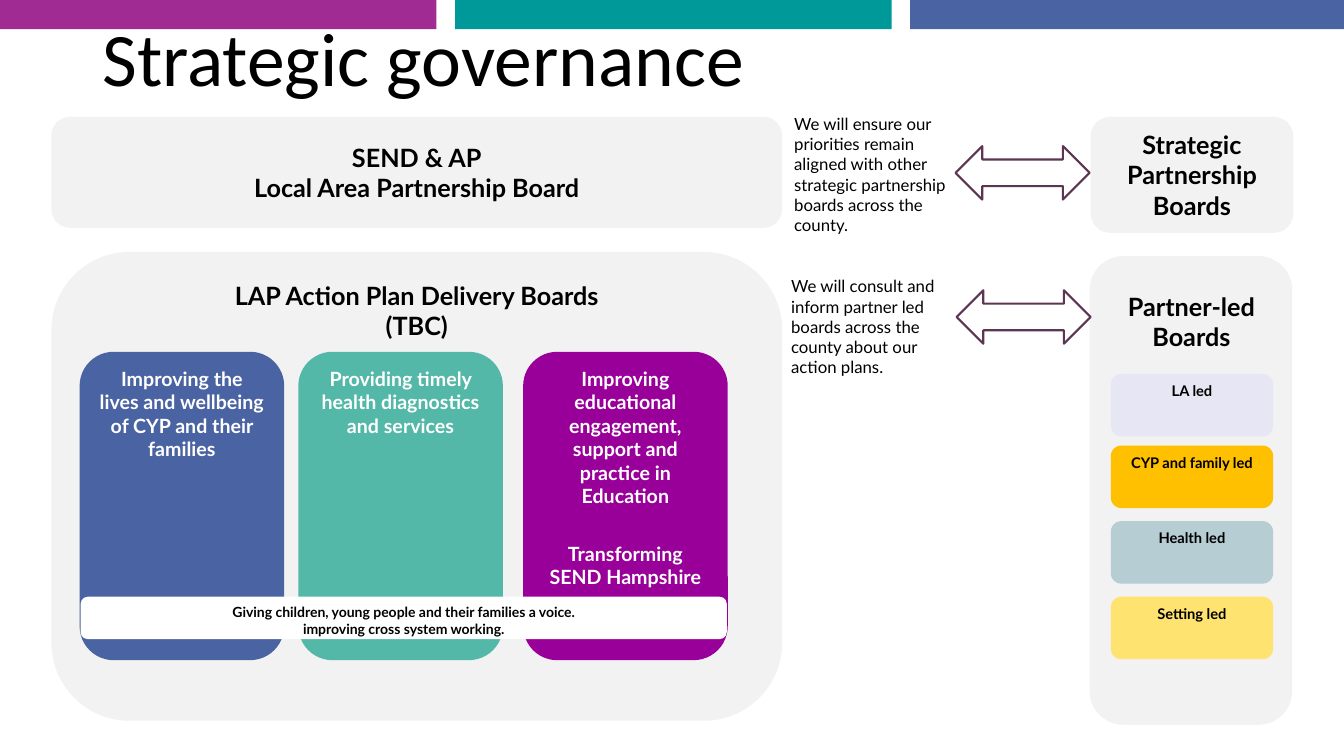
from pptx import Presentation, util as u
from pptx.dml.color import RGBColor
from pptx.enum import shapes, text

BLACK = RGBColor(0x00, 0x00, 0x00)
WHITE = RGBColor(0xFF, 0xFF, 0xFF)
PANEL = RGBColor(0xF2, 0xF2, 0xF2)
PURPLE = RGBColor(0xA0, 0x2B, 0x93)
TEAL = RGBColor(0x00, 0x99, 0x99)
INDIGO = RGBColor(0x4A, 0x63, 0xA3)
BLUE = RGBColor(0x4A, 0x63, 0xA2)
GREEN = RGBColor(0x54, 0xB8, 0xA8)
MAGENTA = RGBColor(0x99, 0x00, 0x99)
LILAC = RGBColor(0xE7, 0xE6, 0xF4)
AMBER = RGBColor(0xFF, 0xC0, 0x00)
MIST = RGBColor(0xB5, 0xCD, 0xD3)
YELLOW = RGBColor(0xFF, 0xE3, 0x71)
PLUM = RGBColor(0x5B, 0x35, 0x51)

GRID = u.Inches(0.1)
COLUMNS, ROWS = 133.33, 75
TOP, MIDDLE = text.MSO_ANCHOR.TOP, text.MSO_ANCHOR.MIDDLE
LEFT, CENTER = text.PP_ALIGN.LEFT, text.PP_ALIGN.CENTER
KIND = shapes.MSO_SHAPE


class Board:
    """Draws on one slide; every place is (column, row, columns, rows)."""

    font = "Lato"

    def __init__(self, prs):
        self.slide = prs.slides.add_slide(prs.slide_layouts[6])

    def cells(self, place):
        return [round(n * GRID) for n in place]

    def add_lines(self, sp, lines, size, color=BLACK, bold=True, align=CENTER,
                  anchor=TOP, gap=0, font=font, spacing=1.0):
        """Fill sp with one paragraph per line, gap points apart."""
        tf = sp.text_frame
        tf.word_wrap = True
        tf.vertical_anchor = anchor
        for i, line in enumerate(lines):
            p = tf.add_paragraph() if i else tf.paragraphs[0]
            p.alignment = align
            p.line_spacing = spacing
            p.space_before = u.Pt(gap if i else 0)
            r = p.add_run()
            r.text = line
            r.font.name = font
            r.font.size = u.Pt(size)
            r.font.bold = bold
            r.font.color.rgb = color

    def shape(self, kind, place, fill, line=None):
        sp = self.slide.shapes.add_shape(kind, *self.cells(place))
        sp.shadow.inherit = False
        sp.fill.solid()
        sp.fill.fore_color.rgb = fill
        if line is None:
            sp.line.fill.background()
        else:
            sp.line.color.rgb = line
            sp.line.width = u.Pt(1.5)
        return sp

    def card(self, place, fill, lines=(), size=18, **style):
        sp = self.shape(KIND.ROUNDED_RECTANGLE, place, fill)
        self.add_lines(sp, lines, size, **style)

    def label(self, place, lines, size, **style):
        sp = self.slide.shapes.add_textbox(*self.cells(place))
        self.add_lines(sp, lines, size, **style)

    def link(self, note_place, note, arrow_at):
        """A note with the double arrow that it explains."""
        self.label(note_place, [note], 12, bold=False, align=LEFT)
        self.shape(KIND.LEFT_RIGHT_ARROW, (*arrow_at, 13.3, 5.3), WHITE, PLUM)


def main():
    prs = Presentation()
    prs.slide_width = round(COLUMNS * GRID)
    prs.slide_height = ROWS * GRID
    board = Board(prs)

    for i, color in enumerate((PURPLE, TEAL, INDIGO)):
        board.shape(KIND.RECTANGLE, (45.15 * i, 0, 43.3, 2.9), color)
    board.label((9.2, 3.4, 115, 5.5), ["Strategic governance"], 54, bold=False,
                align=LEFT, anchor=MIDDLE, font="Calibri", spacing=0.9)

    board.card((5.1, 11.6, 72.5, 11), PANEL,
               ["SEND & AP", "Local Area Partnership Board"], anchor=MIDDLE)
    board.card((5.1, 25, 72.5, 46.5), PANEL,
               ["LAP Action Plan Delivery Boards", "(TBC)"])
    delivery_boards = (
        (7.9, BLUE, ["Improving the lives and wellbeing of CYP and their families"]),
        (29.6, GREEN, ["Providing timely health diagnostics and services"]),
        (51.9, MAGENTA, ["Improving educational engagement, support and practice "
                         "in Education", "Transforming SEND Hampshire"]),
    )
    for left, color, lines in delivery_boards:
        board.card((left, 34.9, 20.3, 30.6), color, lines, 14, color=WHITE, gap=24)
    board.card((8, 59.2, 64.1, 4.2), WHITE,
               ["Giving children, young people and their families a voice.",
                "improving cross system working."], 10)

    board.card((108.2, 11.6, 20.1, 11.5), PANEL,
               ["Strategic Partnership Boards"], anchor=MIDDLE)
    board.card((108.1, 25.4, 20.1, 46.5), PANEL)
    board.label((108.7, 28.4, 19, 8), ["Partner-led Boards"], 18)
    partners = (
        (37.1, LILAC, "LA led"),
        (44.2, AMBER, "CYP and family led"),
        (51.7, MIST, "Health led"),
        (59.2, YELLOW, "Setting led"),
    )
    for top, color, name in partners:
        board.card((110.2, top, 16.1, 6.2), color, [name], 10.5)

    board.link((77.8, 10.8, 17.3, 13.1),
               "We will ensure our priorities remain aligned with other "
               "strategic partnership boards across the county.", (94.8, 14.5))
    board.link((77.5, 26.9, 17.3, 11.1),
               "We will consult and inform partner led boards across the "
               "county about our action plans.", (94.9, 28.8))

    prs.save("out.pptx")


if __name__ == "__main__":
    main()
